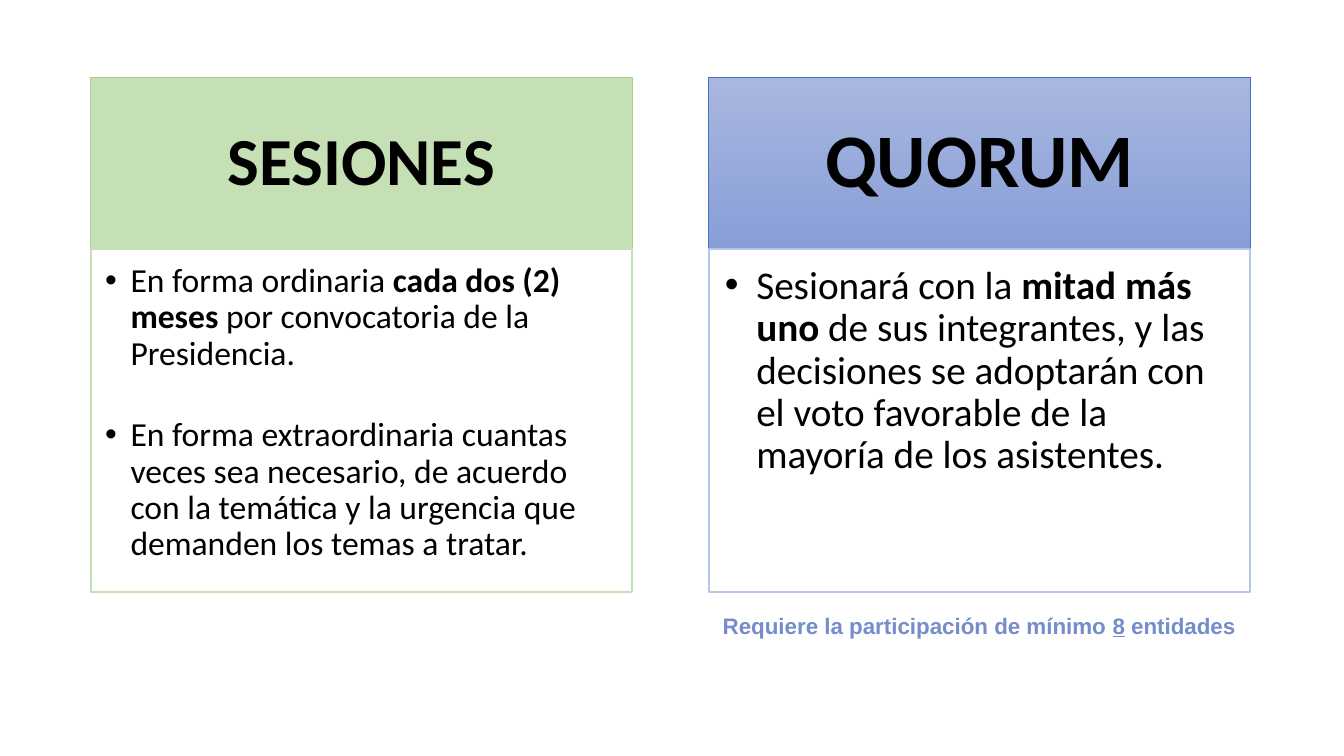
from lxml import etree
from pptx import Presentation
from pptx.dml.color import RGBColor
from pptx.enum import shapes, text
from pptx.oxml import ns
from pptx.util import Cm, Pt

BLACK = RGBColor(0, 0, 0)
WHITE = RGBColor(255, 255, 255)
GREEN = RGBColor(0xC5, 0xE0, 0xB4)
LEAF = RGBColor(0xA9, 0xD1, 0x8E)
SKY = RGBColor(0xA8, 0xB7, 0xDF)
BLUE = RGBColor(0x88, 0x9E, 0xD7)
ROYAL = RGBColor(0x44, 0x72, 0xC4)
PALE = RGBColor(0xB4, 0xC7, 0xE7)
NOTE = RGBColor(0x75, 0x8C, 0xCD)

# Content: runs are (words, style), style "b" for bold and "u" for underline
CARDS = [
    dict(title="SESIONES", size=48, fills=[GREEN], edge=LEAF, frame=GREEN,
         head_pad=(0.94, 0.53), body_pad=(0.36, 0.36, 0.48, 0.53),
         body_size=24, indent=0.64, gap=32.5,
         items=[[("En forma ordinaria ", ""), ("cada dos (2) meses ", "b"),
                 ("por convocatoria de la Presidencia.", "")],
                [("En forma extraordinaria cuantas veces sea necesario, de "
                  "acuerdo con la temática y la urgencia que demanden los "
                  "temas a tratar.", "")]]),
    dict(title="QUORUM", size=54, fills=[SKY, BLUE], edge=ROYAL, frame=PALE,
         head_pad=(1.07, 0.61), body_pad=(0.41, 0.41, 0.56, 0.61),
         body_size=28, indent=0.79, gap=0,
         items=[[("Sesionará con la ", ""), ("mitad más uno", "b"),
                 (" de sus integrantes, y las decisiones se adoptarán con el "
                  "voto favorable de la mayoría de los asistentes.", "")]]),
]
FOOT = [("Requiere la participación de mínimo ", "b"), ("8", "bu"),
        (" entidades", "b")]

# Layout in centimetres
LEFT, TOP, WIDTH, STEP = 2.29, 1.96, 13.64, 15.57
HEAD, BODY = 4.32, 8.64

prs = Presentation()
prs.slide_width, prs.slide_height = Cm(33.87), Cm(19.05)
slide = prs.slides.add_slide(prs.slide_layouts[6])


def add_runs(para, runs, font, size, color):
    for words, style in runs:
        run = para.add_run()
        run.text = words
        run.font.name, run.font.size = font, Pt(size)
        run.font.color.rgb = color
        run.font.bold = "b" in style
        run.font.underline = "u" in style


def add_box(x, y, high, fills, edge, weight, pads, anchor):
    box = slide.shapes.add_shape(shapes.MSO_SHAPE.RECTANGLE,
                                 Cm(x), Cm(y), Cm(WIDTH), Cm(high))
    box.shadow.inherit = False
    if len(fills) == 1:
        box.fill.solid()
        box.fill.fore_color.rgb = fills[0]
    else:
        box.fill.gradient()
        box.fill.gradient_angle = 270
        for stop, color in zip(box.fill.gradient_stops, fills):
            stop.color.rgb = color
    box.line.color.rgb, box.line.width = edge, Pt(weight)
    frame = box.text_frame
    frame.word_wrap, frame.vertical_anchor = True, anchor
    (frame.margin_left, frame.margin_top,
     frame.margin_right, frame.margin_bottom) = map(Cm, pads)
    return frame


def add_bullet(para, indent):
    props = para._p.get_or_add_pPr()
    props.set("marL", str(Cm(indent)))
    props.set("indent", str(-Cm(indent)))
    etree.SubElement(props, ns.qn("a:buFont"), typeface="Arial")
    etree.SubElement(props, ns.qn("a:buChar"), char="•")


# Cards: coloured heading above a framed list
for col, card in enumerate(CARDS):
    x = LEFT + col * STEP
    head = add_box(x, TOP, HEAD, card["fills"], card["edge"], 0.5,
                   card["head_pad"] * 2, text.MSO_ANCHOR.MIDDLE)
    para = head.paragraphs[0]
    para.alignment, para.line_spacing = text.PP_ALIGN.CENTER, 0.9
    add_runs(para, [(card["title"], "b")], "Calibri", card["size"], BLACK)

    body = add_box(x, TOP + HEAD, BODY, [WHITE], card["frame"], 1.5,
                   card["body_pad"], text.MSO_ANCHOR.TOP)
    for row, runs in enumerate(card["items"]):
        para = body.add_paragraph() if row else body.paragraphs[0]
        add_bullet(para, card["indent"])
        para.alignment, para.line_spacing = text.PP_ALIGN.LEFT, 0.9
        if row:
            para.space_before = Pt(card["gap"])
        add_runs(para, runs, "Calibri", card["body_size"], BLACK)

# Note under the second card
foot = slide.shapes.add_textbox(Cm(17.37), Cm(15.29), Cm(14.61), Cm(0.94))
foot.text_frame.word_wrap = True
para = foot.text_frame.paragraphs[0]
para.alignment = text.PP_ALIGN.CENTER
add_runs(para, FOOT, "Arial", 16, NOTE)

prs.save("out.pptx")
